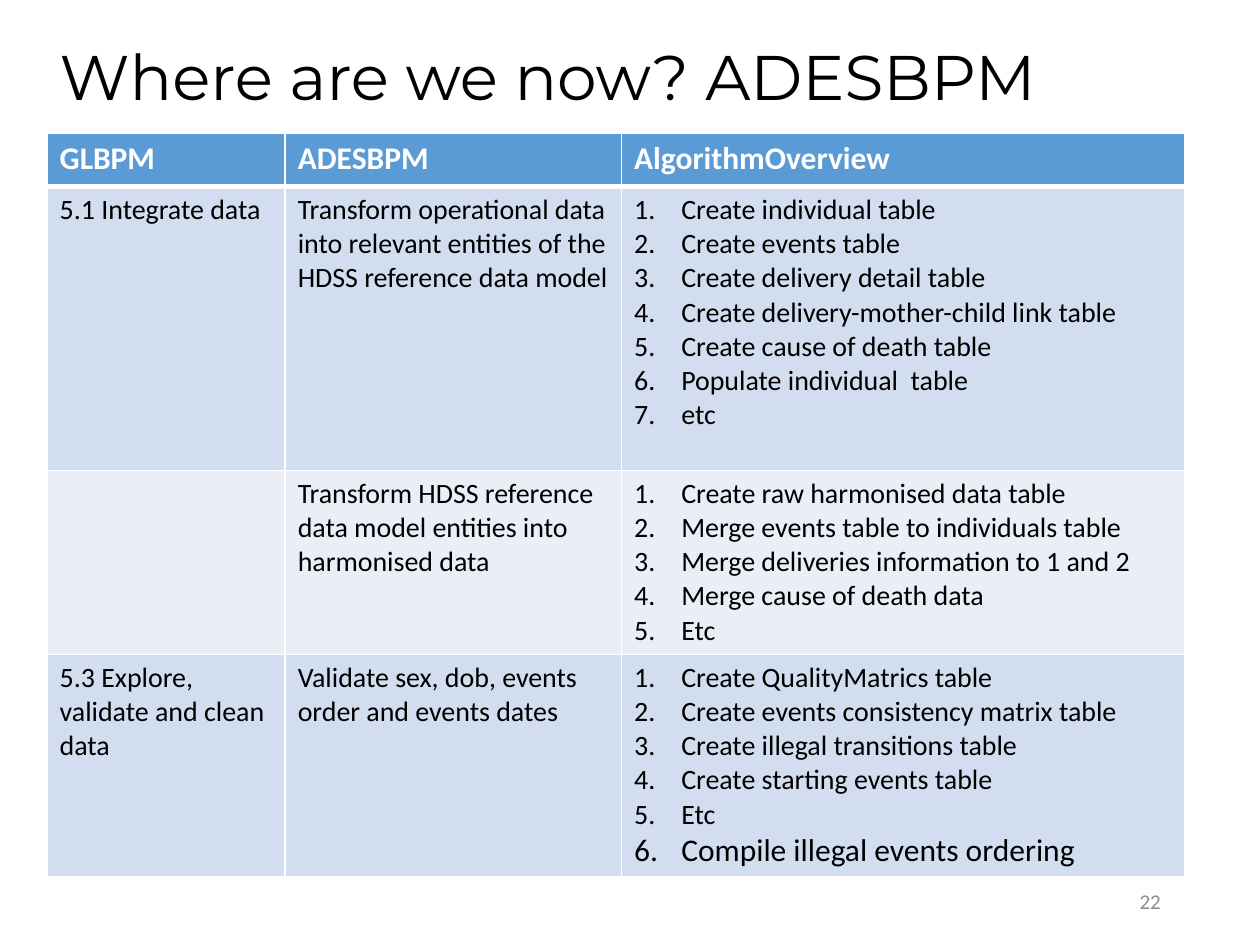
from lxml.etree import SubElement
from pptx import Presentation
from pptx.dml.color import RGBColor
from pptx.enum.text import MSO_ANCHOR, PP_ALIGN
from pptx.oxml.ns import qn
from pptx.util import Cm, Pt

BLACK = RGBColor(0, 0, 0)
WHITE = RGBColor(255, 255, 255)
GREY = RGBColor(0x8C, 0x8C, 0x8C)
HEADER_BLUE = RGBColor(0x5B, 0x9B, 0xD5)
BAND_DARK = RGBColor(0xD2, 0xDE, 0xEF)
BAND_LIGHT = RGBColor(0xEA, 0xEF, 0xF7)

TITLE = "Where are we now? ADESBPM"
PAGE_NUMBER = "22"
HEADINGS = ["GLBPM", "ADESBPM", "AlgorithmOverview"]
STAGES = [
    ("5.1 Integrate data",
     "Transform operational data into relevant entities of the HDSS reference data model",
     ["Create individual table", "Create events table", "Create delivery detail table",
      "Create delivery-mother-child link table", "Create cause of death table",
      "Populate individual  table", "etc"]),
    ("",
     "Transform HDSS reference data model entities into harmonised data",
     ["Create raw harmonised data table", "Merge events table to individuals table",
      "Merge deliveries information to 1 and 2", "Merge cause of death data", "Etc"]),
    ("5.3 Explore, validate and clean data",
     "Validate sex, dob, events order and events dates",
     ["Create QualityMatrics table", "Create events consistency matrix table",
      "Create illegal transitions table", "Create starting events table", "Etc",
      "Compile illegal events ordering"]),
]
LARGE_STEP = "Compile illegal events ordering"
COLUMN_WIDTHS = [4.8, 6.78, 11.35]
ROW_HEIGHTS = [1.07, 5.72, 3.71, 4.45]
LEFT = Cm(0.95)
STEP_INDENT = Cm(0.95)


def write(para, text, size=16, color=BLACK, font="Calibri", bold=False, align=None):
    span = para.add_run()
    span.text = text
    span.font.size = Pt(size)
    span.font.name = font
    span.font.bold = bold
    span.font.color.rgb = color
    para.alignment = align


def number(para):
    """Give the paragraph an automatic number and a hanging indent."""
    properties = para._p.get_or_add_pPr()
    properties.set("marL", str(STEP_INDENT))
    properties.set("indent", str(-STEP_INDENT))
    SubElement(properties, qn("a:buFont"), typeface="+mj-lt")
    SubElement(properties, qn("a:buAutoNum"), type="arabicPeriod")


def style_cell(cell, fill, top=1, bottom=1):
    """Draw white borders, with widths in points, and fill the cell."""
    properties = cell._tc.get_or_add_tcPr()
    for side, width in (("L", 1), ("R", 1), ("T", top), ("B", bottom)):
        line = SubElement(properties, qn(f"a:ln{side}"), w=str(Pt(width)))
        SubElement(SubElement(line, qn("a:solidFill")), qn("a:srgbClr"), val=str(WHITE))
    cell.fill.solid()
    cell.fill.fore_color.rgb = fill


def add_title(page):
    title = page.shapes.title
    title.left, title.top, title.width, title.height = LEFT, Cm(0.76), Cm(21.9), Cm(1.7)
    title.text_frame.vertical_anchor = MSO_ANCHOR.MIDDLE
    para = title.text_frame.paragraphs[0]
    para.line_spacing = 0.9
    write(para, TITLE, size=36, font="Montserrat", align=PP_ALIGN.LEFT)


def add_stage_table(page):
    table = page.shapes.add_table(
        len(ROW_HEIGHTS), len(COLUMN_WIDTHS), LEFT, Cm(2.69),
        Cm(sum(COLUMN_WIDTHS)), Cm(sum(ROW_HEIGHTS))).table
    for column, width in zip(table.columns, COLUMN_WIDTHS):
        column.width = Cm(width)
    for row, height in zip(table.rows, ROW_HEIGHTS):
        row.height = Cm(height)

    for column, heading in enumerate(HEADINGS):
        cell = table.cell(0, column)
        style_cell(cell, HEADER_BLUE, bottom=3)
        write(cell.text_frame.paragraphs[0], heading, size=18, color=WHITE, bold=True)

    for row, (stage, task, steps) in enumerate(STAGES, start=1):
        for column in range(len(HEADINGS)):
            style_cell(table.cell(row, column), BAND_DARK if row % 2 else BAND_LIGHT,
                       top=3 if row == 1 else 1)
        for column, text in enumerate((stage, task)):
            if text:
                write(table.cell(row, column).text_frame.paragraphs[0], text)
        frame = table.cell(row, 2).text_frame
        for index, step in enumerate(steps):
            para = frame.add_paragraph() if index else frame.paragraphs[0]
            number(para)
            write(para, step, size=18 if step == LARGE_STEP else 16)


def add_page_number(page):
    box = page.shapes.add_textbox(Cm(17.93), Cm(17.65), Cm(5.72), Cm(1.02))
    frame = box.text_frame
    frame.word_wrap = True
    frame.vertical_anchor = MSO_ANCHOR.MIDDLE
    write(frame.paragraphs[0], PAGE_NUMBER, size=12, color=GREY, align=PP_ALIGN.RIGHT)


def main():
    deck = Presentation()
    deck.slide_width, deck.slide_height = Cm(25.4), Cm(19.05)
    page = deck.slides.add_slide(deck.slide_layouts[5])
    add_title(page)
    add_stage_table(page)
    add_page_number(page)
    deck.save("out.pptx")


if __name__ == "__main__":
    main()
